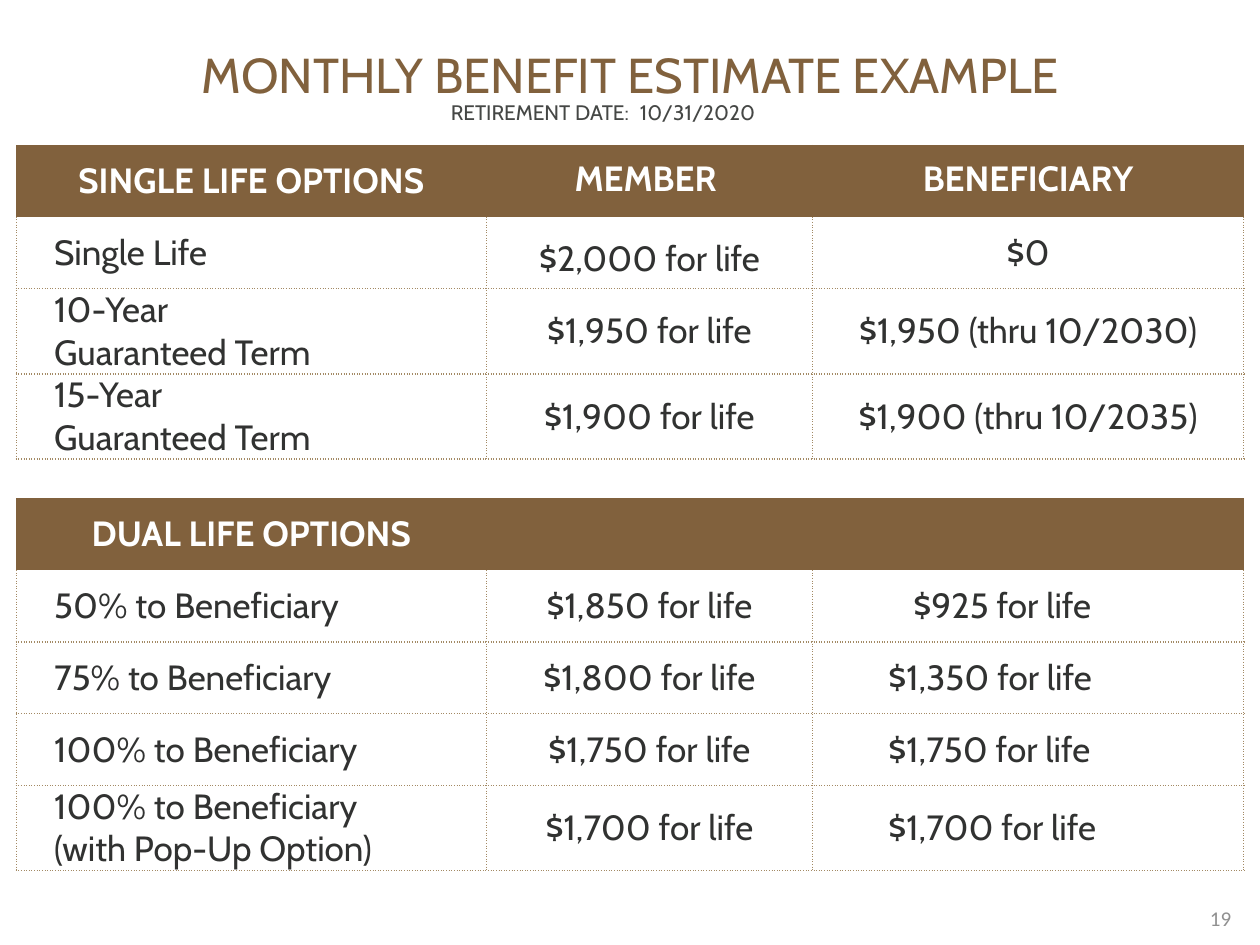
from lxml import etree
from pptx import Presentation
from pptx.dml.color import RGBColor
from pptx.enum import text
from pptx.oxml import ns
from pptx.util import Inches, Pt

BROWN = RGBColor(0x81, 0x61, 0x3D)
TAN = RGBColor(0xA3, 0x8A, 0x65)
WHITE = RGBColor(0xFF, 0xFF, 0xFF)
INK = RGBColor(0x31, 0x32, 0x31)
GREY = RGBColor(0x45, 0x47, 0x45)
PALE = RGBColor(0x90, 0x90, 0x90)
LEFT, CENTER, RIGHT = text.PP_ALIGN.LEFT, text.PP_ALIGN.CENTER, text.PP_ALIGN.RIGHT
NO_STYLE = "{2D5ABB26-0587-4C30-8999-92F81FD0307C}"


def write(p, words, size, color, align=LEFT, font="Cabin", bold=False):
    p.alignment = align
    for i, line in enumerate(words.split("\n")):
        if i:
            p.add_line_break()
        r = p.add_run()
        r.text = line
        r.font.size, r.font.name, r.font.bold = Pt(size), font, bold
        r.font.color.rgb = color


def border(cell, sides, color):
    tcPr = cell._tc.get_or_add_tcPr()
    for side in sides:
        ln = etree.SubElement(tcPr, ns.qn(f"a:ln{side}"), w=str(Pt(1)))
        fill = etree.SubElement(ln, ns.qn("a:solidFill"))
        etree.SubElement(fill, ns.qn("a:srgbClr"), val=str(color))
        etree.SubElement(ln, ns.qn("a:prstDash"), val="sysDot")


prs = Presentation()
prs.slide_width, prs.slide_height = Inches(10), Inches(7.5)
s = prs.slides.add_slide(prs.slide_layouts[6])

# Table contents: title, single life block, spacer, dual life block
TITLE, SPACER = 0, 5
HEADERS = (1, 6)
rows = [
    ("MONTHLY BENEFIT ESTIMATE EXAMPLE", "", ""),
    ("SINGLE LIFE OPTIONS", "MEMBER ", "BENEFICIARY"),
    ("Single Life", "$2,000 for life", "$0"),
    ("10-Year \nGuaranteed Term", "$1,950 for life", "$1,950 (thru 10/2030)"),
    ("15-Year \nGuaranteed Term", "$1,900 for life", "$1,900 (thru 10/2035)"),
    ("", "", ""),
    ("DUAL LIFE OPTIONS", "", ""),
    ("50% to Beneficiary", "$1,850 for life", "$925 for life"),
    ("75% to Beneficiary", "$1,800 for life", "$1,350 for life"),
    ("100% to Beneficiary", "$1,750 for life", "$1,750 for life"),
    ("100% to Beneficiary \n(with Pop-Up Option)", "$1,700 for life", "$1,700 for life"),
]
heights = {TITLE: 1.1, SPACER: 0.31, 10: 0.63}

tbl = s.shapes.add_table(len(rows), 3, Inches(0.13), Inches(0.05), Inches(9.74), Inches(6.5)).table
tbl.first_row = tbl.horz_banding = False
tbl._tbl.tblPr.find(ns.qn("a:tableStyleId")).text = NO_STYLE
for col, width in zip(tbl.columns, (3.73, 2.59, 3.42)):
    col.width = Inches(width)
for i in (TITLE, SPACER):
    tbl.cell(i, 0).merge(tbl.cell(i, 2))

for i, row in enumerate(rows):
    tbl.rows[i].height = Inches(heights.get(i, 0.57))
    for j, words in enumerate(row):
        cell = tbl.cell(i, j)
        p = cell.text_frame.paragraphs[0]
        cell.vertical_anchor = text.MSO_ANCHOR.MIDDLE
        cell.margin_top = cell.margin_bottom = 0
        cell.margin_left = cell.margin_right = Inches(0.1)
        if i in HEADERS:
            border(cell, "LR"[j == 0:3 - (j == 2) - 0 if j != 2 else 1], BROWN)
            cell.fill.solid()
            cell.fill.fore_color.rgb = BROWN
            if j:
                cell.margin_left = cell.margin_right = 0
                p.line_spacing = Pt(22)
        elif i not in (TITLE, SPACER):
            border(cell, "LRB" if i - 1 in HEADERS else "LRTB", TAN)
            cell.fill.background()
        else:
            cell.fill.background()
        if not words:
            continue
        if i == TITLE:
            write(p, words, 28, BROWN, CENTER)
        elif i in HEADERS:
            write(p, words, 20, WHITE, CENTER, bold=True)
        else:
            dual_amount = i > SPACER and j == 2
            if j == 0:
                cell.margin_left = Inches(0.3)
            elif dual_amount:
                cell.margin_left = Inches(0.8 if i == 7 else 0.6)
            write(p, words, 20, INK, LEFT if j == 0 or dual_amount else CENTER)
tbl.cell(2, 1).text_frame.paragraphs[0].line_spacing = Pt(32)

# Retirement date and page number
for words, box, size, color, align, font, anchor in (
    ("RETIREMENT DATE:\t10/31/2020", (3.48, 0.74, 3.13, 0.3), 12, GREY, LEFT, "Cabin", text.MSO_ANCHOR.TOP),
    ("19", (7.54, 7.09, 2.33, 0.4), 12, PALE, RIGHT, "Calibri", text.MSO_ANCHOR.MIDDLE),
):
    tf = s.shapes.add_textbox(*map(Inches, box)).text_frame
    tf.word_wrap = True
    tf.vertical_anchor = anchor
    write(tf.paragraphs[0], words, size, color, align, font)

prs.save("out.pptx")
